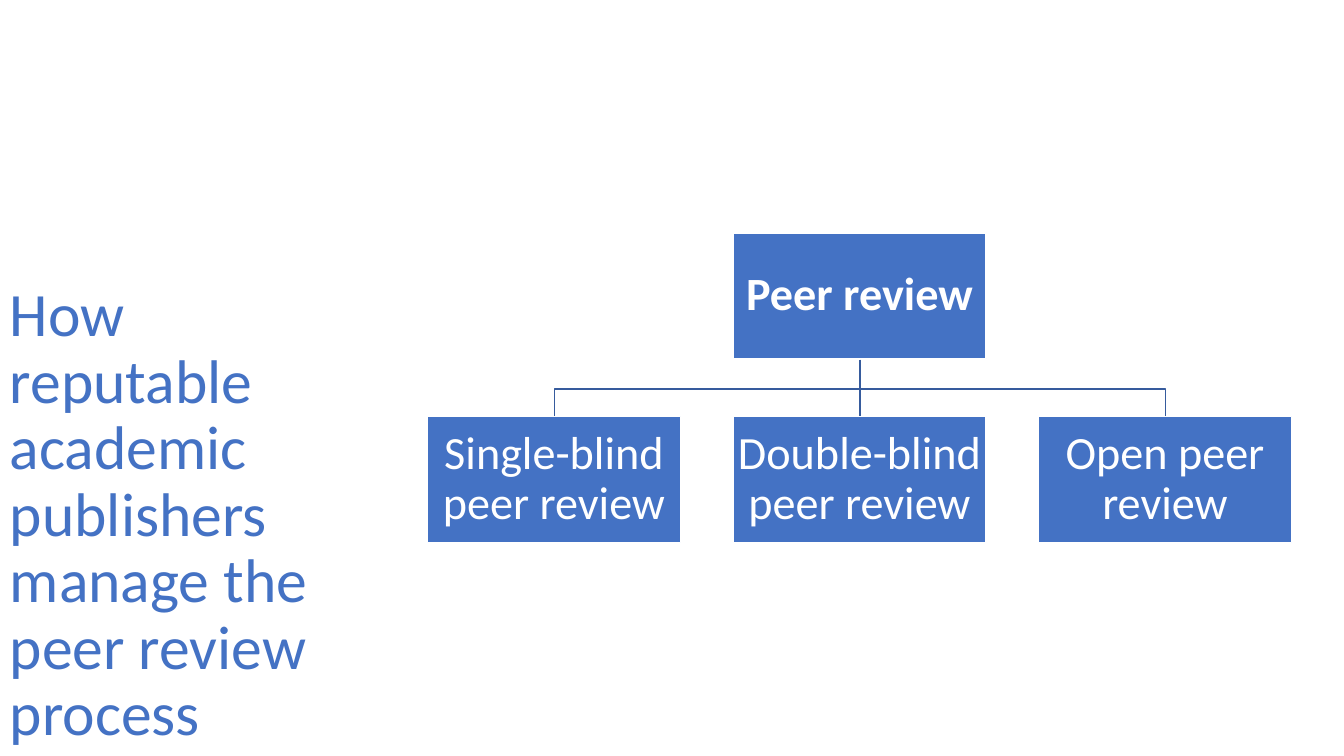
from lxml.etree import SubElement
from pptx import Presentation
from pptx.dml.color import RGBColor
from pptx.enum.shapes import MSO_CONNECTOR, MSO_SHAPE
from pptx.enum.text import MSO_ANCHOR, PP_ALIGN
from pptx.oxml.ns import qn
from pptx.util import Pt

PX = 9144
COLORS = {"blue": "4472C4", "branch": "365B9D", "white": "FFFFFF"}
BOX_WIDTH, BOX_HEIGHT = 251, 125
FIRST_LEFT, PITCH = 424, 303
ROOT_TOP, TYPE_TOP = 231, 413
BRANCH_TOP, BRANCH_BEND = 357, 386
REVIEW_TYPES = [
    "Single-blind peer review",
    "Double-blind peer review",
    "Open peer review",
]


def px(*lengths):
    """Turn pixel lengths into a list of EMU."""
    return [length * PX for length in lengths]


def color(name):
    """Look up a named colour."""
    return RGBColor.from_string(COLORS[name])


def write(frame, text, size, fill, bold=False, align=PP_ALIGN.LEFT, inset=(10, 5)):
    """Put one formatted paragraph into a text frame."""
    frame.word_wrap = True
    frame.vertical_anchor = MSO_ANCHOR.MIDDLE
    frame.margin_left = frame.margin_right = inset[0] * PX
    frame.margin_top = frame.margin_bottom = inset[1] * PX
    paragraph = frame.paragraphs[0]
    paragraph.text = text
    paragraph.alignment = align
    paragraph.line_spacing = 0.9
    font = paragraph.font
    font.name, font.size, font.bold = "Calibri", Pt(size), bold
    font.color.rgb = color(fill)


def style_line(line, name):
    """Give a line its colour and the common width."""
    line.color.rgb = color(name)
    line.width = Pt(1)


def add_box(slide, left, top, text, bold=False):
    """Draw one box of the hierarchy with its label."""
    box = slide.shapes.add_shape(
        MSO_SHAPE.RECTANGLE, *px(left, top, BOX_WIDTH, BOX_HEIGHT))
    box.shadow.inherit = False
    box.fill.solid()
    box.fill.fore_color.rgb = color("blue")
    style_line(box.line, "white")
    write(box.text_frame, text, 33, "white", bold, PP_ALIGN.CENTER, (2, 2))


def add_branch(slide, start, end):
    """Link the root to a review type, straight down or with an elbow."""
    if start == end:
        stem = slide.shapes.add_connector(
            MSO_CONNECTOR.STRAIGHT, *px(start, BRANCH_TOP, end, TYPE_TOP))
        SubElement(stem.line._get_or_add_ln().getparent(), qn("a:effectLst"))
        style_line(stem.line, "branch")
        return
    builder = slide.shapes.build_freeform(start, BRANCH_TOP, scale=PX)
    builder.add_line_segments(
        [(start, BRANCH_BEND), (end, BRANCH_BEND), (end, TYPE_TOP)], close=False)
    elbow = builder.convert_to_shape()
    elbow.shadow.inherit = False
    elbow.fill.background()
    style_line(elbow.line, "branch")


def main():
    """Build the peer review slide."""
    deck = Presentation()
    deck.slide_width, deck.slide_height = px(1333, 750)
    slide = deck.slides.add_slide(deck.slide_layouts[6])

    heading = slide.shapes.add_textbox(*px(0, 274, 326, 476))
    write(heading.text_frame,
          "How reputable academic publishers manage the peer review process",
          44, "blue")

    lefts = [FIRST_LEFT + PITCH * column for column in range(len(REVIEW_TYPES))]
    root_left = lefts[1]
    half = BOX_WIDTH // 2 + 1
    for left in lefts:
        add_branch(slide, root_left + half, left + half)
    add_box(slide, root_left, ROOT_TOP, "Peer review", bold=True)
    for left, review_type in zip(lefts, REVIEW_TYPES):
        add_box(slide, left, TYPE_TOP, review_type)

    deck.save("out.pptx")


if __name__ == "__main__":
    main()
